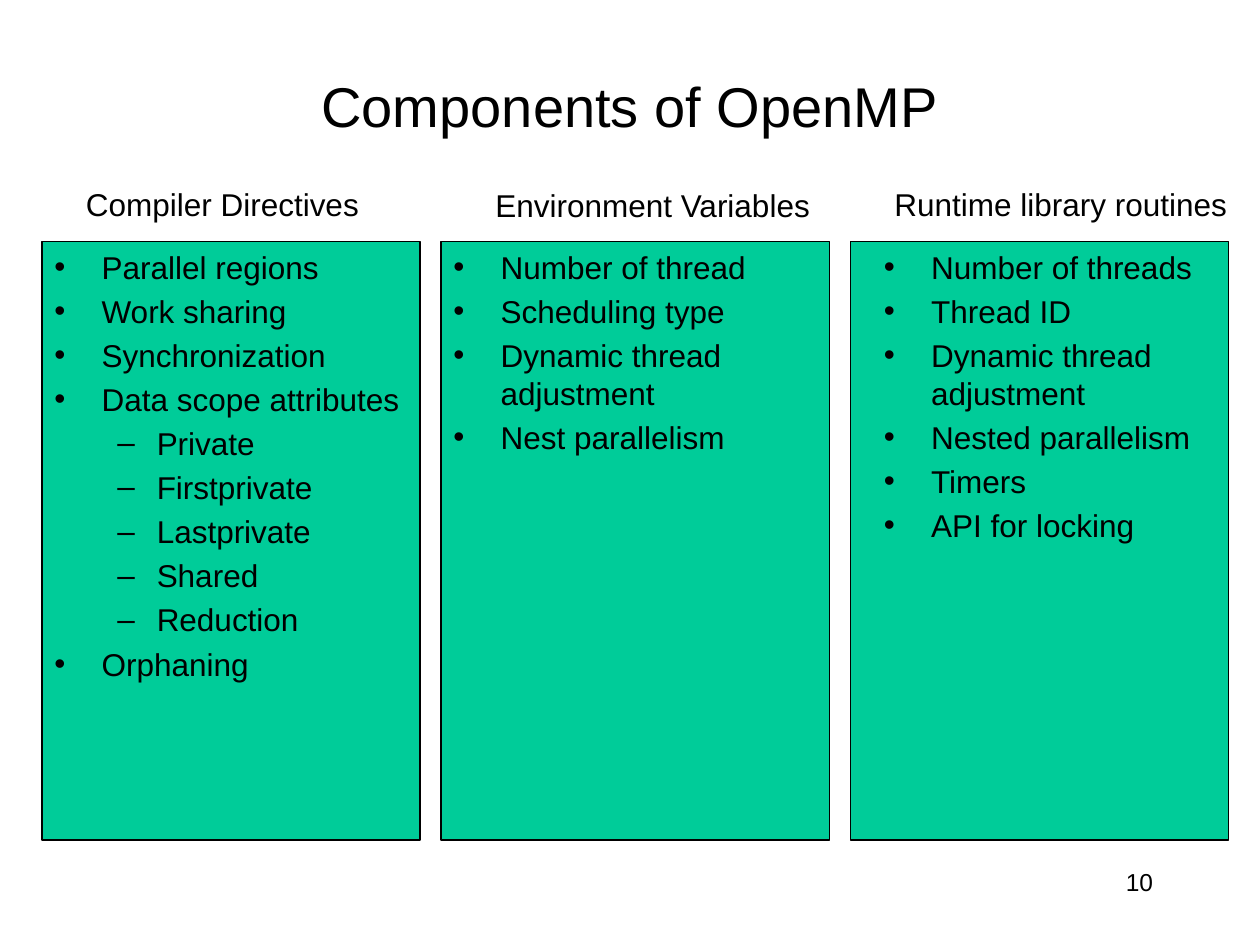
from lxml.etree import SubElement
from pptx import Presentation
from pptx.dml.color import RGBColor
from pptx.enum.shapes import MSO_SHAPE
from pptx.enum.text import MSO_ANCHOR, MSO_AUTO_SIZE, PP_ALIGN
from pptx.oxml.ns import qn
from pptx.util import Pt

BLACK = RGBColor(0x00, 0x00, 0x00)
GREEN = RGBColor(0x00, 0xCC, 0x99)
WHITE = RGBColor(0xFF, 0xFF, 0xFF)

PANEL_TOP, PANEL_HEIGHT = 138, 342
# Bullet, left margin and first-line indent for each outline level
LEVELS = [("•", 27, -27), ("–", 58.5, -22.5)]

# Heading with its left, top and width, panel left and width,
# list left and width, items
COLUMNS = [
    ("Compiler Directives", (42, 102, 172), (24, 216), (24, 222), [
        "Parallel regions", "Work sharing", "Synchronization",
        "Data scope attributes",
        ["Private", "Firstprivate", "Lastprivate", "Shared", "Reduction"],
        "Orphaning"]),
    ("Environment Variables", (276, 103, 196), (252, 222), (252, 240), [
        "Number of thread", "Scheduling type", "Dynamic thread adjustment",
        "Nest parallelism"]),
    ("Runtime library routines", (504, 102, 207), (486, 216), (498, 222), [
        "Number of threads", "Thread ID", "Dynamic thread adjustment",
        "Nested parallelism", "Timers", "API for locking"]),
]


class SlideBuilder:
    font_name = "Arial"
    body_size = 18

    def __init__(self, slide):
        self.slide = slide
        slide.background.fill.solid()
        slide.background.fill.fore_color.rgb = WHITE

    def style(self, para, size):
        for span in para.runs:
            span.font.name = self.font_name
            span.font.size = Pt(size)
            span.font.color.rgb = BLACK

    def text(self, content, left, top, width, height, size=body_size,
             align=PP_ALIGN.LEFT, anchor=MSO_ANCHOR.TOP, wrap=True):
        box = self.slide.shapes.add_textbox(Pt(left), Pt(top), Pt(width), Pt(height))
        frame = box.text_frame
        frame.text = content
        frame.word_wrap = wrap
        frame.vertical_anchor = anchor
        for para in frame.paragraphs:
            para.alignment = align
            self.style(para, size)
        return box

    def heading(self, content, left, top, width):
        box = self.text(content, left, top, width, 29, wrap=False)
        box.text_frame.auto_size = MSO_AUTO_SIZE.SHAPE_TO_FIT_TEXT

    def panel(self, left, width):
        panel = self.slide.shapes.add_shape(
            MSO_SHAPE.RECTANGLE, Pt(left), Pt(PANEL_TOP), Pt(width), Pt(PANEL_HEIGHT))
        panel.shadow.inherit = False
        panel.fill.solid()
        panel.fill.fore_color.rgb = GREEN
        panel.line.color.rgb = BLACK
        panel.line.width = Pt(0.75)

    def bullets(self, items, left, width):
        """Add a bulleted list; a nested list becomes the second level."""
        outline = []
        for item in items:
            if isinstance(item, list):
                outline += [(1, entry) for entry in item]
            else:
                outline.append((0, item))
        content = "\n".join(entry for _, entry in outline)
        box = self.text(content, left, PANEL_TOP, width, PANEL_HEIGHT)
        for para, (level, _) in zip(box.text_frame.paragraphs, outline):
            mark, margin, indent = LEVELS[level]
            para.level = level
            para.space_before = Pt(0.2 * self.body_size)
            properties = para._p.get_or_add_pPr()
            properties.set("marL", str(Pt(margin)))
            properties.set("indent", str(Pt(indent)))
            SubElement(properties, qn("a:buFont"), typeface=self.font_name)
            SubElement(properties, qn("a:buChar"), char=mark)


def main():
    deck = Presentation()
    deck.slide_width, deck.slide_height = Pt(720), Pt(540)
    page = SlideBuilder(deck.slides.add_slide(deck.slide_layouts[6]))
    page.text("Components of OpenMP", 54, 30, 612, 60, size=32,
              align=PP_ALIGN.CENTER, anchor=MSO_ANCHOR.MIDDLE)
    for heading, place, panel, listing, items in COLUMNS:
        page.panel(*panel)
        page.bullets(items, *listing)
        page.heading(heading, *place)
    page.text("10", 516, 492, 150, 36, size=14, align=PP_ALIGN.RIGHT)
    deck.save("out.pptx")


if __name__ == "__main__":
    main()
